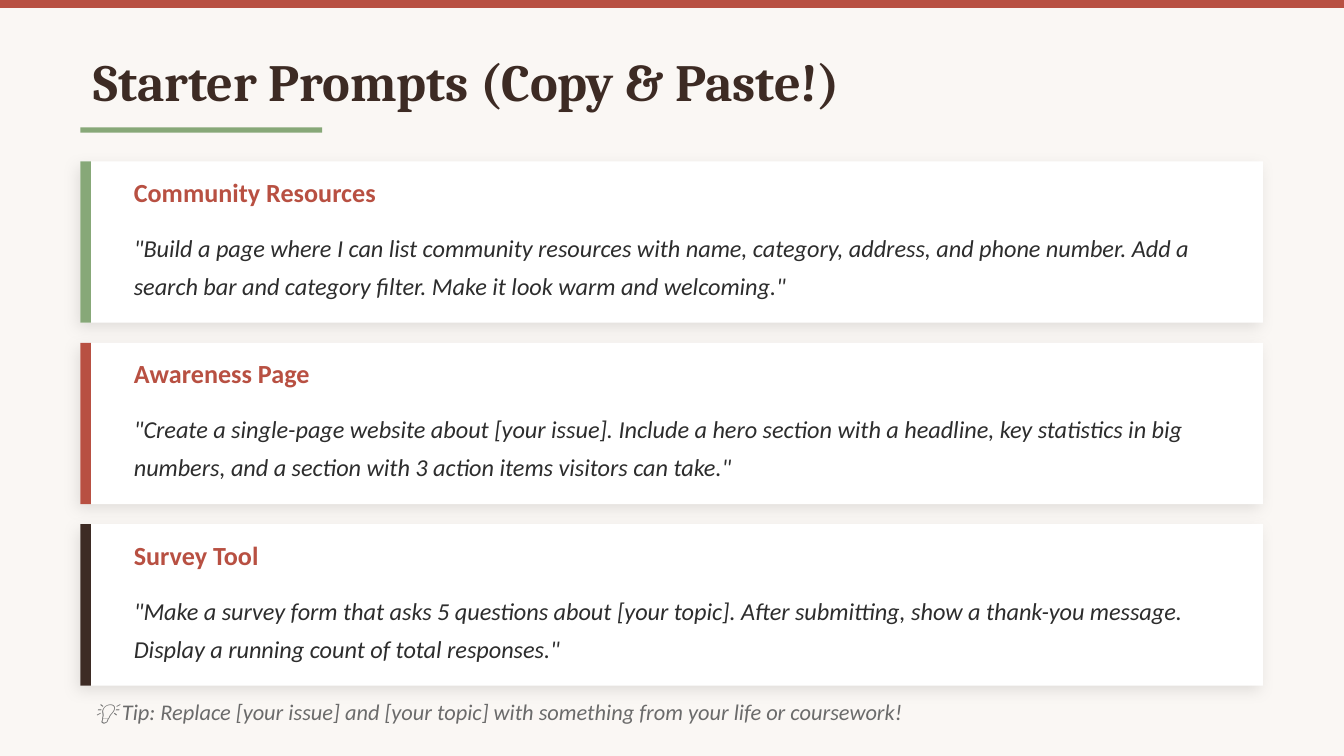
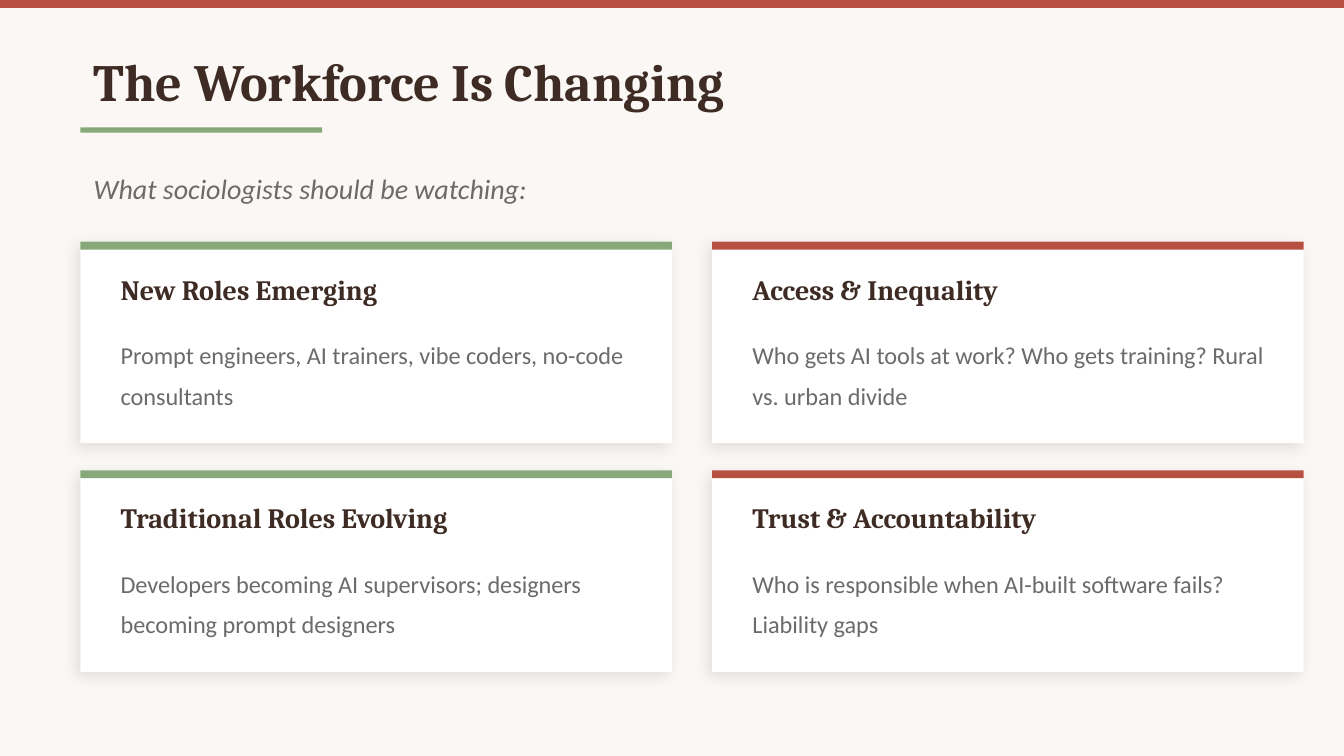
from lxml import etree
from pptx import Presentation
from pptx.dml.color import RGBColor
from pptx.enum.shapes import MSO_SHAPE
from pptx.enum.text import MSO_ANCHOR, MSO_AUTO_SIZE, PP_ALIGN
from pptx.oxml.ns import qn
from pptx.util import Cm, Pt

RECT = MSO_SHAPE.RECTANGLE
MIDDLE = MSO_ANCHOR.MIDDLE
FIXED = MSO_AUTO_SIZE.NONE
LEFT = PP_ALIGN.LEFT

CREAM = RGBColor(0xFA, 0xF7, 0xF4)
RUST = RGBColor(0xB8, 0x50, 0x42)
SAGE = RGBColor(0x87, 0xA8, 0x78)
BROWN = RGBColor(0x3D, 0x2B, 0x24)
WHITE = RGBColor(0xFF, 0xFF, 0xFF)
INK = RGBColor(0x2D, 0x2D, 0x2D)
GREY = RGBColor(0x6B, 0x6B, 0x6B)
SERIF, SANS = "Cambria", "Calibri"

WIDTH, HEIGHT = 25.4, 14.29
EDGE, SPAN = 1.52, 22.35

PROMPTS = [
    ("Community Resources", SAGE,
     '"Build a page where I can list community resources with name, category, '
     'address, and phone number. Add a search bar and category filter. '
     'Make it look warm and welcoming."'),
    ("Awareness Page", RUST,
     '"Create a single-page website about [your issue]. Include a hero section '
     'with a headline, key statistics in big numbers, and a section with '
     '3 action items visitors can take."'),
    ("Survey Tool", BROWN,
     '"Make a survey form that asks 5 questions about [your topic]. After '
     'submitting, show a thank-you message. Display a running count of total '
     'responses."'),
]
TIP = ("💡 Tip: Replace [your issue] and [your topic] with something from "
       "your life or coursework!")

LEAD = "What sociologists should be watching:"
TRENDS = [
    (SAGE, [
        ("New Roles Emerging",
         "Prompt engineers, AI trainers, vibe coders, no-code consultants"),
        ("Traditional Roles Evolving",
         "Developers becoming AI supervisors; designers becoming prompt designers"),
    ]),
    (RUST, [
        ("Access & Inequality",
         "Who gets AI tools at work? Who gets training? Rural vs. urban divide"),
        ("Trust & Accountability",
         "Who is responsible when AI-built software fails? Liability gaps"),
    ]),
]


def add_rect(slide, x, y, w, h, color):
    """Add a plain filled rectangle."""
    rect = slide.shapes.add_shape(RECT, Cm(x), Cm(y), Cm(w), Cm(h))
    rect.shadow.inherit = False
    rect.fill.solid()
    rect.fill.fore_color.rgb = color
    rect.line.fill.background()
    return rect


def add_card(slide, x, y, w, h):
    """Add a white card with a soft shadow."""
    card = add_rect(slide, x, y, w, h, WHITE)
    effects = card.element.spPr.find(qn("a:effectLst"))
    shade = etree.SubElement(
        effects, qn("a:outerShdw"), blurRad=str(Pt(8)), dist=str(Pt(3)),
        dir=str(135 * 60000), algn="bl", rotWithShape="0")
    color = etree.SubElement(shade, qn("a:srgbClr"), val="000000")
    etree.SubElement(color, qn("a:alpha"), val="10000")


def set_text(box, text, size, color, face=SANS, bold=False, italic=False,
             space=None):
    """Write one styled paragraph into a shape."""
    frame = box.text_frame
    frame.word_wrap = True
    frame.auto_size = FIXED
    frame.vertical_anchor = MIDDLE
    para = frame.paragraphs[0]
    para.alignment = LEFT
    if space:
        para.line_spacing = space
    run = para.add_run()
    run.text = text
    font = run.font
    font.name, font.size = face, Pt(size)
    font.bold, font.italic = bold, italic
    font.color.rgb = color


def add_text(slide, x, y, w, h, text, size, color, **style):
    """Add a text box."""
    box = slide.shapes.add_textbox(Cm(x), Cm(y), Cm(w), Cm(h))
    set_text(box, text, size, color, **style)


def add_slide(deck, text):
    """Add a slide with its band, title and underline."""
    slide = deck.slides.add_slide(deck.slide_layouts[5])
    slide.background.fill.solid()
    slide.background.fill.fore_color.rgb = CREAM
    add_rect(slide, 0, 0, WIDTH, 0.15, RUST)
    title = slide.shapes.title
    title.left, title.top = Cm(EDGE), Cm(0.64)
    title.width, title.height = Cm(SPAN), Cm(1.78)
    set_text(title, text, 28, BROWN, face=SERIF, bold=True)
    add_rect(slide, EDGE, 2.41, 4.57, 0.1, SAGE)
    return slide


def add_prompts(deck):
    """Build the slide of stacked prompt cards."""
    slide = add_slide(deck, "Starter Prompts (Copy & Paste!)")
    tall, step = 3.05, 3.43
    for row, (head, color, body) in enumerate(PROMPTS):
        y = 3.05 + row * step
        add_card(slide, EDGE, y, SPAN, tall)
        add_rect(slide, EDGE, y, 0.2, tall, color)
        x, w = EDGE + 0.76, 21.08
        add_text(slide, x, y + 0.13, w, 0.89, head, 14, RUST, bold=True)
        add_text(slide, x, y + 1.02, w, 1.78, body, 13, INK, italic=True,
                 space=1.3)
    add_text(slide, EDGE, 12.95, SPAN, 1.02, TIP, 12, GREY, italic=True)


def add_trends(deck):
    """Build the slide with a grid of trend cards."""
    slide = add_slide(deck, "The Workforce Is Changing")
    add_text(slide, EDGE, 3.05, SPAN, 1.02, LEAD, 15, GREY, italic=True)
    wide, tall, pad = 11.18, 3.81, 0.51
    for col, (color, cards) in enumerate(TRENDS):
        x = EDGE + col * (wide + 0.76)
        for row, (head, body) in enumerate(cards):
            y = 4.57 + row * (tall + 0.51)
            add_card(slide, x, y, wide, tall)
            add_rect(slide, x, y, wide, 0.15, color)
            w = wide - 2 * pad
            add_text(slide, x + pad, y + 0.38, w, 1.02, head, 15, BROWN,
                     face=SERIF, bold=True)
            add_text(slide, x + pad, y + 1.4, w, 2.03, body, 13, GREY,
                     space=1.4)


def main():
    """Build and save the deck."""
    deck = Presentation()
    deck.slide_width, deck.slide_height = Cm(WIDTH), Cm(HEIGHT)
    add_prompts(deck)
    add_trends(deck)
    deck.save("out.pptx")


if __name__ == "__main__":
    main()
